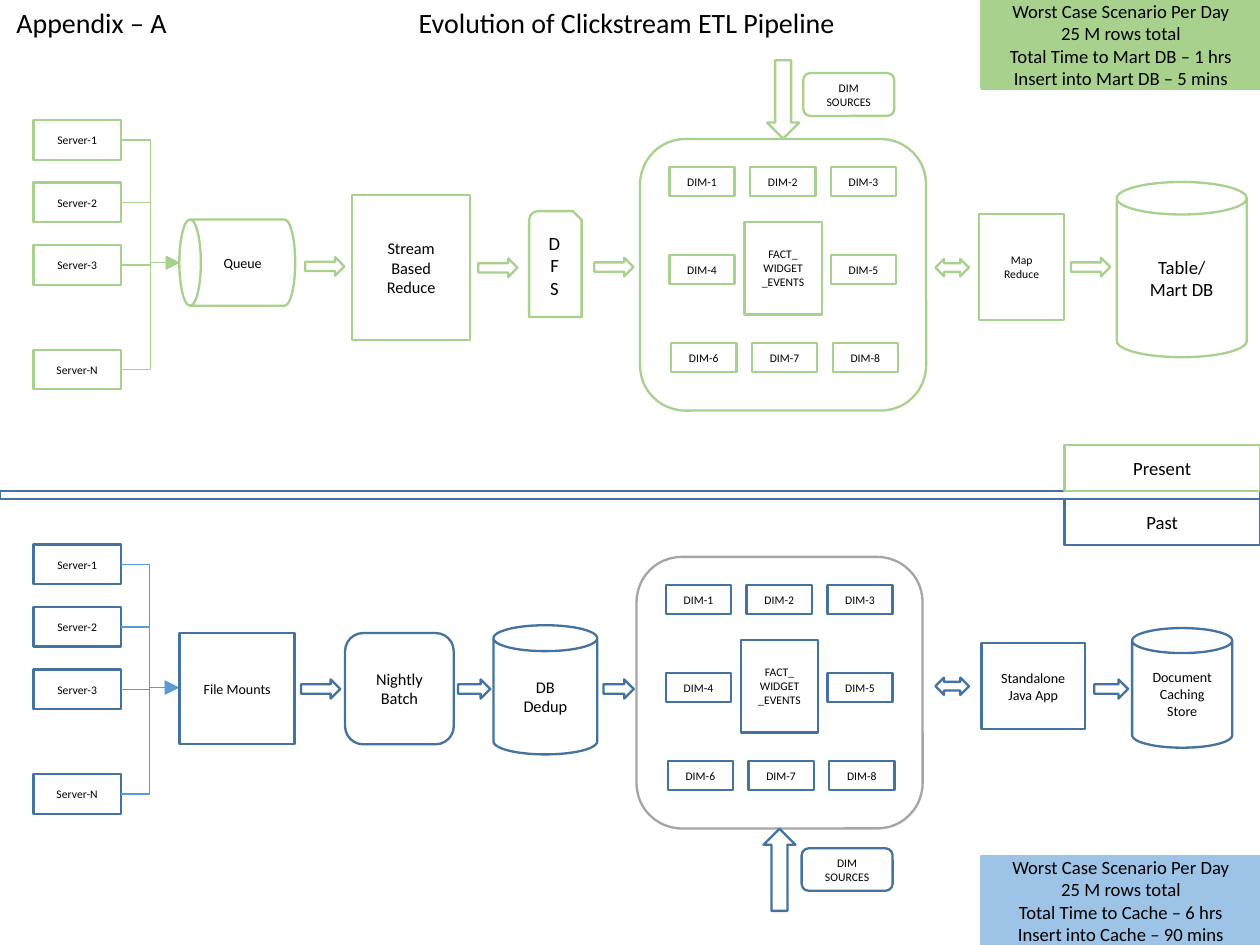
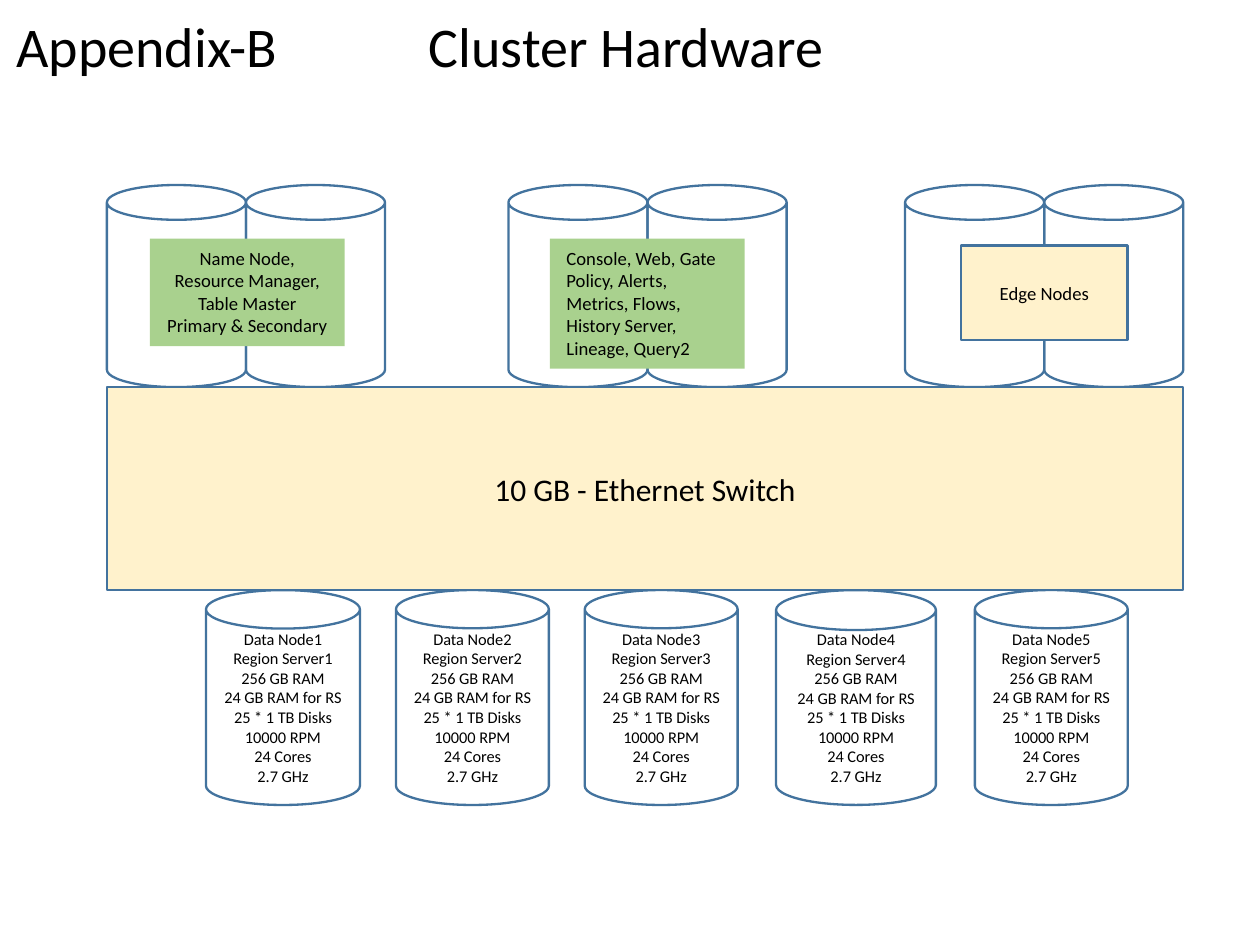
"""Build two appendix slides: the ETL pipeline then and now, and the cluster hardware."""
from dataclasses import dataclass
from typing import Optional

from lxml import etree
from pptx import Presentation
from pptx.dml.color import RGBColor
from pptx.enum.shapes import MSO_CONNECTOR, MSO_SHAPE
from pptx.enum.text import MSO_ANCHOR, PP_ALIGN
from pptx.oxml.ns import qn
from pptx.slide import Slide
from pptx.util import Pt

RECT = MSO_SHAPE.RECTANGLE
ROUNDED = MSO_SHAPE.ROUNDED_RECTANGLE
SNIPPED = MSO_SHAPE.SNIP_ROUND_RECTANGLE
CAN = MSO_SHAPE.CAN
RIGHT = MSO_SHAPE.RIGHT_ARROW
BOTH_WAYS = MSO_SHAPE.LEFT_RIGHT_ARROW
DOWN = MSO_SHAPE.DOWN_ARROW
UP = MSO_SHAPE.UP_ARROW
ELBOW = MSO_CONNECTOR.ELBOW
LEFT, CENTER = PP_ALIGN.LEFT, PP_ALIGN.CENTER
TOP, MIDDLE = MSO_ANCHOR.TOP, MSO_ANCHOR.MIDDLE


@dataclass(frozen=True)
class Theme:
    font: str = "Calibri"
    black: str = "000000"
    green: str = "A9D18E"
    blue: str = "43739E"
    sky: str = "5B9BD5"
    pale_blue: str = "9DC3E6"
    grey: str = "A5A5A5"
    cream: str = "FFF2CC"
    tiny: float = 5
    small: float = 6
    medium: float = 7
    large: float = 8
    evolution_title: float = 12
    switch: float = 13.5
    cluster_title: float = 24
    outline: float = 1
    thin: float = 0.5


THEME = Theme()


@dataclass(frozen=True)
class Box:
    kind: MSO_SHAPE
    left: float
    top: float
    width: float
    height: float
    text: str = ""
    size: float = THEME.tiny
    line: Optional[str] = THEME.blue
    fill: Optional[str] = None
    align: PP_ALIGN = CENTER
    anchor: MSO_ANCHOR = MIDDLE
    rotation: float = 0


@dataclass(frozen=True)
class Pipeline:
    color: str
    link_color: str
    frame_color: str
    server_top: float
    target: tuple[float, float]
    frame: tuple[float, float]
    stages: tuple[Box, ...]


@dataclass(frozen=True)
class DataNode:
    left: float
    width: float


def set_font(paragraph, size: float) -> None:
    """Give a paragraph the theme font in black."""
    paragraph.font.name = THEME.font
    paragraph.font.size = Pt(size)
    paragraph.font.color.rgb = RGBColor.from_string(THEME.black)


def draw_box(page: Slide, box: Box) -> None:
    """Draw one preset shape with its text."""
    shape = page.shapes.add_shape(
        box.kind, Pt(box.left), Pt(box.top), Pt(box.width), Pt(box.height))
    shape.shadow.inherit = False
    shape.rotation = box.rotation
    if box.fill:
        shape.fill.solid()
        shape.fill.fore_color.rgb = RGBColor.from_string(box.fill)
    else:
        shape.fill.background()
    if box.line:
        shape.line.color.rgb = RGBColor.from_string(box.line)
        shape.line.width = Pt(THEME.outline)
    else:
        shape.line.fill.background()
    if not box.text:
        return
    frame = shape.text_frame
    frame.word_wrap = True
    frame.vertical_anchor = box.anchor
    frame.text = box.text
    if box.rotation:
        frame._txBody.bodyPr.set("vert", "vert")
    for paragraph in frame.paragraphs:
        paragraph.alignment = box.align
        set_font(paragraph, box.size)


def draw_title(page: Slide, label: str, heading: str, size: float,
               width: float, height: float, tab: float) -> None:
    """Write the appendix label and, at a tab stop, the heading."""
    frame = page.shapes.add_textbox(0, 0, Pt(width), Pt(height)).text_frame
    frame.word_wrap = True
    frame.vertical_anchor = MIDDLE
    frame.text = f"{label}\t{heading}"
    paragraph = frame.paragraphs[0]
    paragraph.line_spacing = 0.9
    tabs = etree.SubElement(paragraph._p.get_or_add_pPr(), qn("a:tabLst"))
    etree.SubElement(tabs, qn("a:tab"), pos=str(Pt(tab)), algn="l")
    set_font(paragraph, size)


def draw_link(page: Slide, start: tuple[float, float],
              end: tuple[float, float], color: str) -> None:
    """Draw an elbow arrow."""
    link = page.shapes.add_connector(
        ELBOW, Pt(start[0]), Pt(start[1]), Pt(end[0]), Pt(end[1]))
    link.line.color.rgb = RGBColor.from_string(color)
    link.line.width = Pt(THEME.thin)
    properties = link._element.spPr
    etree.SubElement(properties.find(qn("a:ln")), qn("a:tailEnd"), type="triangle")
    etree.SubElement(properties, qn("a:effectLst"))


def draw_servers(page: Slide, pipeline: Pipeline) -> None:
    """Draw the web servers and their links to the first stage."""
    left, width, height = 14.4, 37.4, 17
    for name, offset in (("1", 0), ("2", 26.8), ("3", 53.6), ("N", 98.4)):
        top = pipeline.server_top + offset
        draw_box(page, Box(RECT, left, top, width, height, f"Server-{name}",
                           line=pipeline.color))
        draw_link(page, (left + width, top + height / 2), pipeline.target,
                  pipeline.link_color)


def draw_star_schema(page: Slide, pipeline: Pipeline) -> None:
    """Draw the fact table amid its eight dimensions."""
    left, top = pipeline.frame
    draw_box(page, Box(ROUNDED, left, top, 122.6, 116.4, line=pipeline.frame_color))
    cells = [(row, column) for row in range(3) for column in range(3)
             if (row, column) != (1, 1)]
    for number, (row, column) in enumerate(cells, 1):
        shift = 0.8 if row == 2 else 0
        draw_box(page, Box(RECT, left + 12.6 + shift + 34.6 * column,
                           top + 12.1 + 37.7 * row, 28, 12.4, f"DIM-{number}",
                           line=pipeline.color))
    draw_box(page, Box(RECT, left + 44.7, top + 35.5, 33.2, 39.7,
                       "FACT_\nWIDGET_EVENTS", line=pipeline.color))


def draw_pipeline(page: Slide, pipeline: Pipeline) -> None:
    """Draw one half of the evolution slide."""
    draw_servers(page, pipeline)
    draw_star_schema(page, pipeline)
    for stage in pipeline.stages:
        draw_box(page, stage)


def summary(top: float, color: str, target: str, total: str, insert: str) -> Box:
    """Return the worst-case panel of one pipeline."""
    text = (f"Worst Case Scenario Per Day\n25 M rows total\n"
            f"Total Time to {target} – {total}\nInsert into {target} – {insert}")
    return Box(RECT, 420.7, top, 119.5, 38, text, THEME.large, color, color)


GREEN = THEME.green
PRESENT = Pipeline(
    GREEN, GREEN, GREEN, 51.5, (77, 112.6), (274.3, 59.6),
    (
        Box(CAN, 83.2, 87.7, 37, 49.7, "Queue", THEME.small, GREEN, rotation=270),
        Box(RECT, 151, 83.7, 50.4, 62.2, "Stream\nBased Reduce", THEME.medium, GREEN),
        Box(SNIPPED, 226.8, 90.5, 22.5, 45.4, "DFS", THEME.large, GREEN),
        Box(RECT, 419.7, 91.8, 36.4, 45.3, "Map\nReduce", THEME.tiny, GREEN),
        Box(CAN, 478.6, 78, 55.7, 75.1, "Table/\nMart DB", THEME.large, GREEN),
        Box(DOWN, 328.8, 25.8, 13.7, 33.6, line=GREEN),
        Box(ROUNDED, 344.3, 31.3, 39, 18.4, "DIM SOURCES", THEME.tiny, GREEN),
        *(Box(RIGHT, left, top, 16.8, 8, line=GREEN) for left, top in (
            (130.8, 110.2), (205, 110.8), (254.7, 110.5), (459, 110.5))),
        Box(BOTH_WAYS, 400.9, 111, 14.4, 7.4, line=GREEN),
        Box(RECT, 456.2, 190.8, 83.8, 19.6, "Present", THEME.large, GREEN),
        summary(0, GREEN, "Mart DB", "1 hrs", "5 mins"),
    ))
PAST = Pipeline(
    THEME.blue, THEME.sky, THEME.grey, 233.4, (76.6, 294.7), (272.8, 238.7),
    (
        Box(RECT, 77, 271.3, 49.3, 47.5, "File Mounts", THEME.small),
        Box(ROUNDED, 147.9, 271.3, 46.6, 47.7, "Nightly Batch", THEME.medium),
        Box(CAN, 211.5, 268, 44.5, 55.4, "DB\nDedup", THEME.medium),
        Box(RECT, 420.7, 275.6, 44.2, 37, "Standalone\nJava App", THEME.small),
        Box(CAN, 485.2, 269.2, 42.9, 51.3, "Document Caching Store", THEME.small),
        Box(UP, 327.2, 355.2, 13.7, 35.2),
        Box(ROUNDED, 343.6, 363.6, 39, 18.2, "DIM SOURCES"),
        *(Box(RIGHT, left, 291.2, width, 8.2) for left, width in (
            (129, 16.8), (196.3, 13.8), (258.6, 13), (469, 14.5))),
        Box(BOTH_WAYS, 400.9, 290.4, 14.4, 7.4),
        Box(RECT, 456.2, 214, 83.8, 19.6, "Past", THEME.large),
        summary(367, THEME.pale_blue, "Cache", "6 hrs", "90 mins"),
    ))
DATA_NODES = (DataNode(88.3, 66), DataNode(169.7, 65.5), DataNode(250.6, 65.5),
              DataNode(332.6, 68.5), DataNode(417.8, 65.5))


def build_evolution(page: Slide) -> None:
    """Build the pipeline slide."""
    draw_title(page, "Appendix – A", "Evolution of Clickstream ETL Pipeline",
               THEME.evolution_title, 465.8, 20.9, 172.4)
    draw_box(page, Box(RECT, 0, 210.5, 540, 3.4))
    draw_pipeline(page, PRESENT)
    draw_pipeline(page, PAST)


def build_cluster(page: Slide) -> None:
    """Build the hardware slide."""
    draw_title(page, "Appendix-B", "Cluster Hardware",
               THEME.cluster_title, 488.9, 42.5, 176.7)
    for number, node in enumerate(DATA_NODES, 1):
        text = (f"Data Node{number}\nRegion Server{number}\n256 GB RAM\n"
                "24 GB RAM for RS\n25 * 1 TB Disks 10000 RPM\n24 Cores\n2.7 GHz")
        draw_box(page, Box(CAN, node.left, 252.9, node.width, 92.1, text, THEME.medium))
    can_width = 59.6
    for left in (45.8, 217.9, 387.9):
        for position in range(2):
            draw_box(page, Box(CAN, left + position * can_width, 79.3, can_width, 86.6))
    for box in (
        Box(RECT, 64.3, 102.3, 83.5, 46.1,
            "Name Node, Resource Manager, Table Master\nPrimary & Secondary",
            THEME.large, None, GREEN, anchor=TOP),
        Box(RECT, 235.7, 102.3, 83.5, 55.7,
            "Console, Web, Gate Policy, Alerts, Metrics, Flows, "
            "History Server, Lineage, Query2",
            THEME.large, None, GREEN, LEFT, TOP),
        Box(RECT, 411.9, 105.2, 71.4, 40.5, "Edge Nodes", THEME.large, fill=THEME.cream),
        Box(RECT, 45.8, 166, 461.3, 86.9, "10 GB - Ethernet Switch", THEME.switch,
            fill=THEME.cream),
    ):
        draw_box(page, box)


def main() -> None:
    """Build and save the deck."""
    deck = Presentation()
    deck.slide_width, deck.slide_height = Pt(540), Pt(405)
    for build in (build_evolution, build_cluster):
        build(deck.slides.add_slide(deck.slide_layouts[6]))
    deck.save("out.pptx")


if __name__ == "__main__":
    main()
